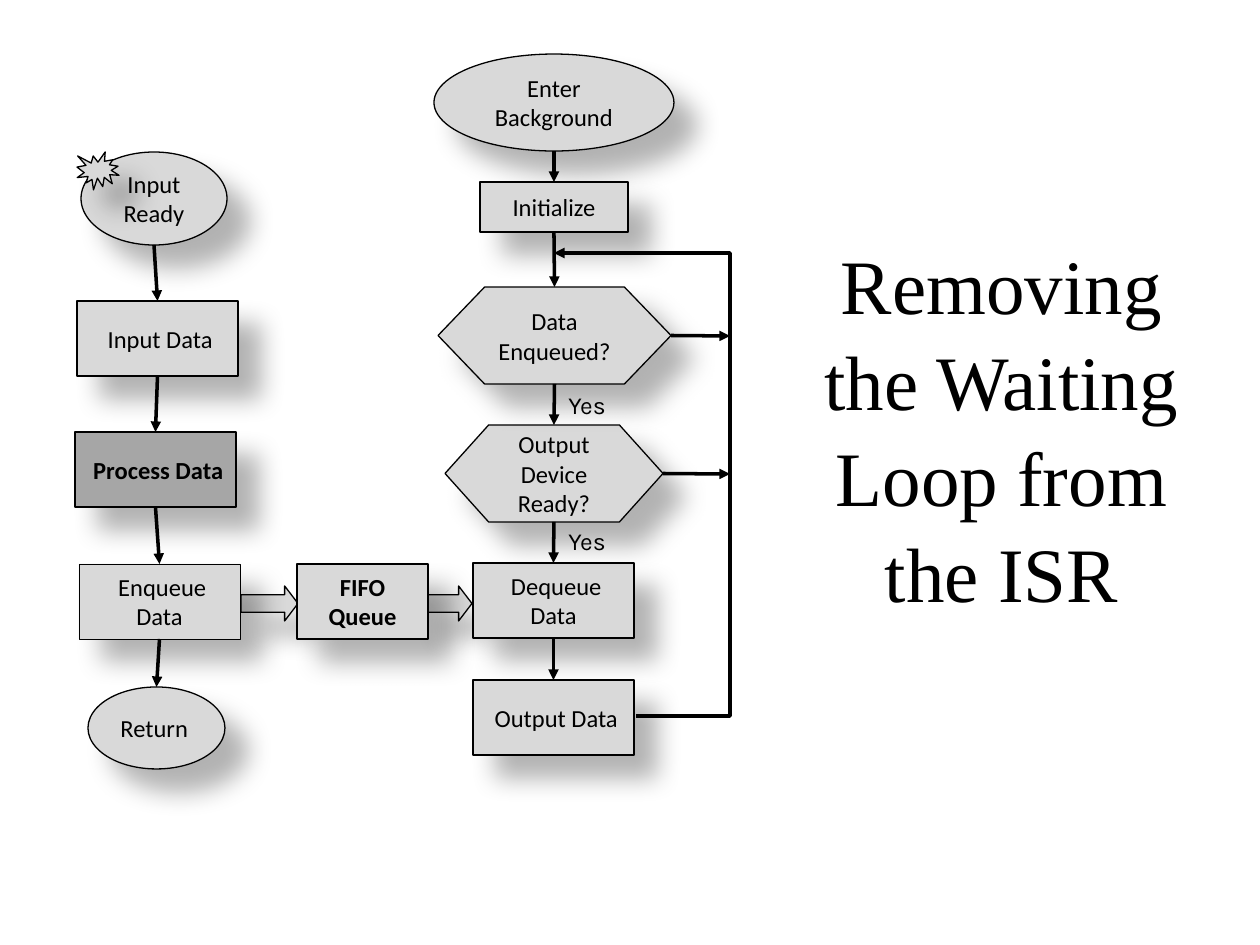
import pptx
import pptx.util
import pptx.dml.color
import pptx.enum.shapes
import pptx.enum.text
import pptx.oxml
import pptx.oxml.ns
import lxml.etree

PX = 914400 / 126
Pt = pptx.util.Pt
qn = pptx.oxml.ns.qn
rgb = pptx.dml.color.RGBColor.from_string
KIND = pptx.enum.shapes.MSO_SHAPE
ALIGN = pptx.enum.text.PP_ALIGN
BLACK, LIGHT, DARK = "000000", "D9D9D9", "A6A6A6"


def write(shape, text, font="Calibri", size=14, bold=False, align=ALIGN.CENTER):
    frame = shape.text_frame
    frame.word_wrap = True
    para = frame.paragraphs[0]
    para.alignment = align
    run = para.add_run()
    run.text = text
    run.font.name = font
    run.font.size = Pt(size)
    run.font.bold = bold
    run.font.color.rgb = rgb(BLACK)
    return frame


def wire(line):
    """Give a line its black stroke and arrowhead, without a shadow."""
    line.line.color.rgb = rgb(BLACK)
    line.line.width = Pt(2)
    props = line.element.spPr
    lxml.etree.SubElement(props.find(qn("a:ln")), qn("a:tailEnd"), type="triangle")
    if props.find(qn("a:effectLst")) is None:
        lxml.etree.SubElement(props, qn("a:effectLst"))


deck = pptx.Presentation()
deck.slide_width = round(1260 * PX)
deck.slide_height = round(945 * PX)
slide = deck.slides.add_slide(deck.slide_layouts[6])
shapes = slide.shapes

# Flowchart blocks: name, kind, left, top, width, height, text
BLOCKS = [
    ("push", KIND.RIGHT_ARROW, 241, 586, 57, 35, ""),
    ("pull", KIND.RIGHT_ARROW, 419, 586, 53, 35, ""),
    ("dequeue", KIND.RECTANGLE, 473, 563, 161, 75, " Dequeue Data"),
    ("device", KIND.FLOWCHART_PREPARATION, 445, 425, 218, 97, "Output Device Ready?"),
    ("input", KIND.RECTANGLE, 77, 301, 161, 75, " Input Data"),
    ("process", KIND.RECTANGLE, 75, 432, 161, 75, " Process Data"),
    ("enqueue", KIND.RECTANGLE, 79, 564, 161, 75, " Enqueue Data"),
    ("ready", KIND.OVAL, 81, 152, 146, 93, "Input Ready"),
    ("enter", KIND.OVAL, 434, 54, 240, 97, "Enter Background"),
    ("output", KIND.RECTANGLE, 473, 680, 161, 75, " Output Data"),
    ("burst", KIND.EXPLOSION1, 77, 152, 42, 38, ""),
    ("return", KIND.OVAL, 88, 687, 137, 82, "Return"),
    ("data", KIND.FLOWCHART_PREPARATION, 438, 287, 233, 97, "Data Enqueued?"),
    ("init", KIND.RECTANGLE, 480, 182, 148, 50, "Initialize"),
    ("fifo", KIND.RECTANGLE, 297, 564, 131, 75, "FIFO Queue"),
]
nodes = {}
for name, kind, *area, text in BLOCKS:
    node = shapes.add_shape(kind, *[round(v * PX) for v in area])
    node.fill.solid()
    node.fill.fore_color.rgb = rgb(DARK if name == "process" else LIGHT)
    node.line.color.rgb = rgb(BLACK)
    node.line.width = Pt(0.25 if name == "enqueue" else 0.75)
    node.shadow.inherit = False
    glow = lxml.etree.SubElement(
        node.element.spPr.find(qn("a:effectLst")), qn("a:outerShdw"),
        blurRad=str(Pt(15)), dist=str(Pt(18)), dir="2700000",
        algn="tl", rotWithShape="0")
    tint = lxml.etree.SubElement(glow, qn("a:srgbClr"), val=BLACK)
    lxml.etree.SubElement(tint, qn("a:alpha"), val="30000")
    if kind == KIND.RIGHT_ARROW:
        node.adjustments[1] = 0.38
    if text:
        write(node, text, bold=name in ("process", "fifo"),
              align=ALIGN.LEFT if name == "return" else ALIGN.CENTER)
    nodes[name] = node

# Arrows: start, end, joined block and side at either end
TOP, BOTTOM, RIGHT = 0, 2, 3
ARROWS = [
    (154, 245, 157, 301, None, ("input", TOP)),
    (157, 376, 156, 432, ("input", BOTTOM), ("process", TOP)),
    (156, 507, 159, 564, ("process", BOTTOM), ("enqueue", TOP)),
    (159, 639, 156, 687, ("enqueue", BOTTOM), ("return", TOP)),
    (554, 151, 554, 182, None, ("init", TOP)),
    (554, 232, 554, 287, ("init", BOTTOM), ("data", TOP)),
    (554, 384, 554, 425, ("data", BOTTOM), ("device", TOP)),
    (554, 522, 554, 563, ("device", BOTTOM), ("dequeue", TOP)),
    (554, 638, 554, 680, ("dequeue", BOTTOM), ("output", TOP)),
    (671, 336, 730, 336, ("data", RIGHT), None),
    (663, 474, 730, 474, ("device", RIGHT), None),
]
for *ends, tail, head in ARROWS:
    line = shapes.add_connector(
        pptx.enum.shapes.MSO_CONNECTOR.STRAIGHT, *[round(v * PX) for v in ends])
    if tail:
        line.begin_connect(nodes[tail[0]], tail[1])
    if head:
        line.end_connect(nodes[head[0]], head[1])
    wire(line)

# Return path to the top of the loop
pen = shapes.build_freeform(636, 716, scale=PX)
pen.add_line_segments([(730, 716), (730, 253), (554, 253)], close=False)
loop = pen.convert_to_shape()
loop.fill.background()
loop.shadow.inherit = False
wire(loop)

for top in (384, 520):
    label = shapes.add_textbox(*[round(v * PX) for v in (556, top, 76, 45)])
    write(label, "Yes", font="Karla", align=ALIGN.LEFT)

title = shapes.add_textbox(*[round(v * PX) for v in (781, 84, 441, 683)])
frame = write(title, "Removing the Waiting Loop from the ISR", font="Times New Roman", size=44)
frame.vertical_anchor = pptx.enum.text.MSO_ANCHOR.MIDDLE
frame.paragraphs[0].line_spacing = 1.04

deck.save("out.pptx")
